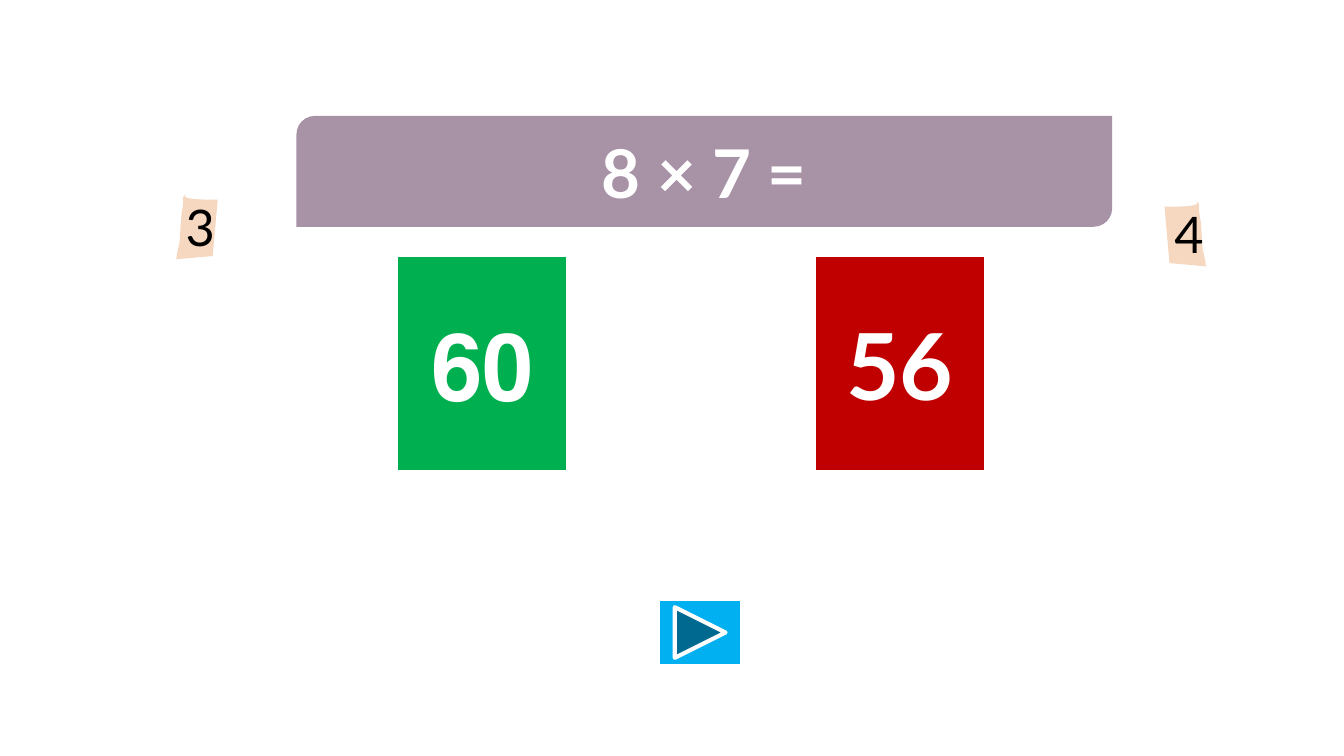
"""Build a multiplication quiz slide with two answer cards and a next button."""
from pptx import Presentation
from pptx.dml.color import RGBColor
from pptx.enum.shapes import MSO_SHAPE as Shape
from pptx.enum.text import MSO_ANCHOR as Anchor, PP_ALIGN as Align
from pptx.util import Inches, Pt

COLORS = {
    "white": "FFFFFF", "black": "000000", "sky": "00B0F0", "paper": "F6D8C0",
    "mauve": "A792A6", "green": "00B050", "red": "C00000",
}
TAG_START = (1.85, 1.92)
TAG_CURVES = [
    [(1.75, 1.99), (2.11, 1.98), (2.16, 1.98)],
    [(2.11, 2.54)],
    [(1.78, 2.57)],
    [(1.72, 2.57), (1.75, 2.59), (1.75, 2.57)],
    [(1.75, 2.54), (1.76, 2.49), (1.78, 2.41)],
    [(1.79, 2.34), (1.79, 2.16), (1.81, 2.07)],
    [(1.83, 1.96), (1.79, 1.97), (1.85, 1.92)],
]
CURVE_STEPS = 10
MIRROR_SUM = 13.71
MIRROR_DROP = 0.07


def curve_point(points, t):
    weights = ((1 - t) ** 3, 3 * t * (1 - t) ** 2, 3 * t ** 2 * (1 - t), t ** 3)
    return tuple(sum(w * p[axis] for w, p in zip(weights, points)) for axis in (0, 1))


def tag_outline():
    outline = [TAG_START]
    for segment in TAG_CURVES:
        if len(segment) == 1:
            outline += segment
        else:
            points = [outline[-1], *segment]
            outline += [curve_point(points, step / CURVE_STEPS)
                        for step in range(1, CURVE_STEPS + 1)]
    return outline


class QuizSlide:
    font = "Lato"

    def __init__(self, deck):
        self.page = deck.slides.add_slide(deck.slide_layouts[6])

    def color(self, name):
        return RGBColor.from_string(COLORS[name])

    def paint(self, shape, fill, border=0):
        shape.shadow.inherit = False
        shape.fill.solid()
        shape.fill.fore_color.rgb = self.color(fill)
        if border:
            shape.line.color.rgb = self.color("white")
            shape.line.width = Pt(border)
        else:
            shape.line.fill.background()

    def label(self, shape, text, size, color="white", bold=True, rtl=False):
        frame = shape.text_frame
        frame.text = text
        frame.word_wrap = True
        frame.vertical_anchor = Anchor.MIDDLE
        para = frame.paragraphs[0]
        para.alignment = Align.CENTER
        if rtl:
            para._p.get_or_add_pPr().set("rtl", "1")
        font = para.runs[0].font
        font.name, font.size, font.bold = self.font, Pt(size), bold
        font.color.rgb = self.color(color)

    def block(self, kind, bounds, fill, border=0):
        shape = self.page.shapes.add_shape(kind, *map(Inches, bounds))
        self.paint(shape, fill, border)
        return shape

    def card(self, left, text, fill, rtl=False):
        box = self.block(Shape.RECTANGLE, (left, 2.51, 1.75, 2.2), fill, 6)
        self.label(box, text, 66, rtl=rtl)

    def tag(self, text, mirrored=False):
        outline = tag_outline()
        if mirrored:
            outline = [(MIRROR_SUM - x, y + MIRROR_DROP) for x, y in outline]
        start, *rest = [(Inches(x), Inches(y)) for x, y in outline]
        builder = self.page.shapes.build_freeform(*start)
        builder.add_line_segments(rest, close=True)
        shape = builder.convert_to_shape()
        self.paint(shape, "paper")
        self.label(shape, text, 36, "black", bold=False)


def main():
    deck = Presentation()
    deck.slide_width, deck.slide_height = Inches(13.33), Inches(7.5)
    quiz = QuizSlide(deck)
    quiz.block(Shape.ACTION_BUTTON_FORWARD_OR_NEXT, (6.53, 5.94, 0.83, 0.67), "sky", 3)
    quiz.tag("3")
    quiz.tag("4", mirrored=True)
    question = quiz.block(Shape.ROUND_2_DIAG_RECTANGLE, (2.94, 1.15, 8.09, 1.1), "mauve")
    quiz.label(question, "8 × 7 =", 48)
    quiz.card(3.91, "60", "green", rtl=True)
    quiz.card(8.05, "56", "red")
    deck.save("out.pptx")


if __name__ == "__main__":
    main()
